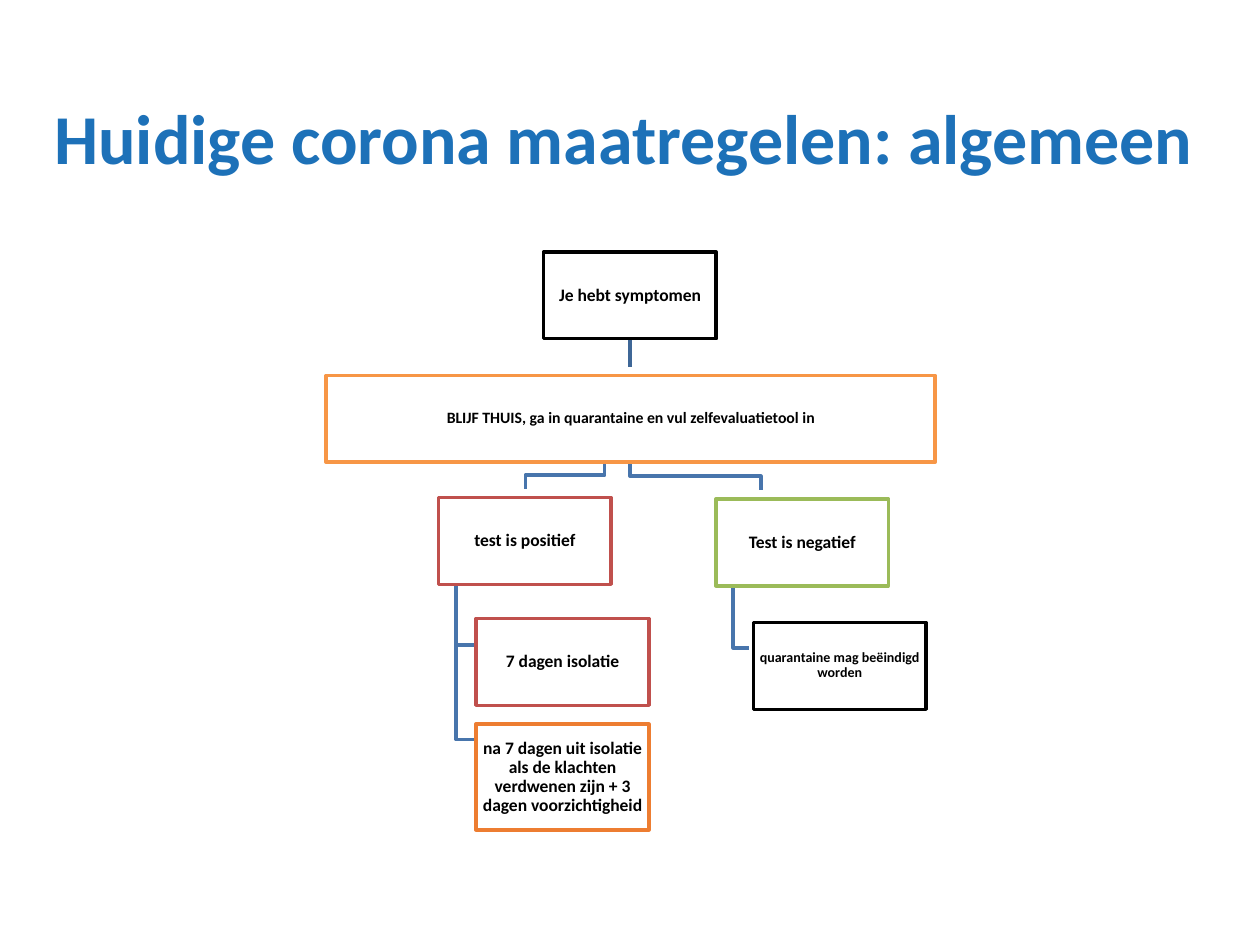
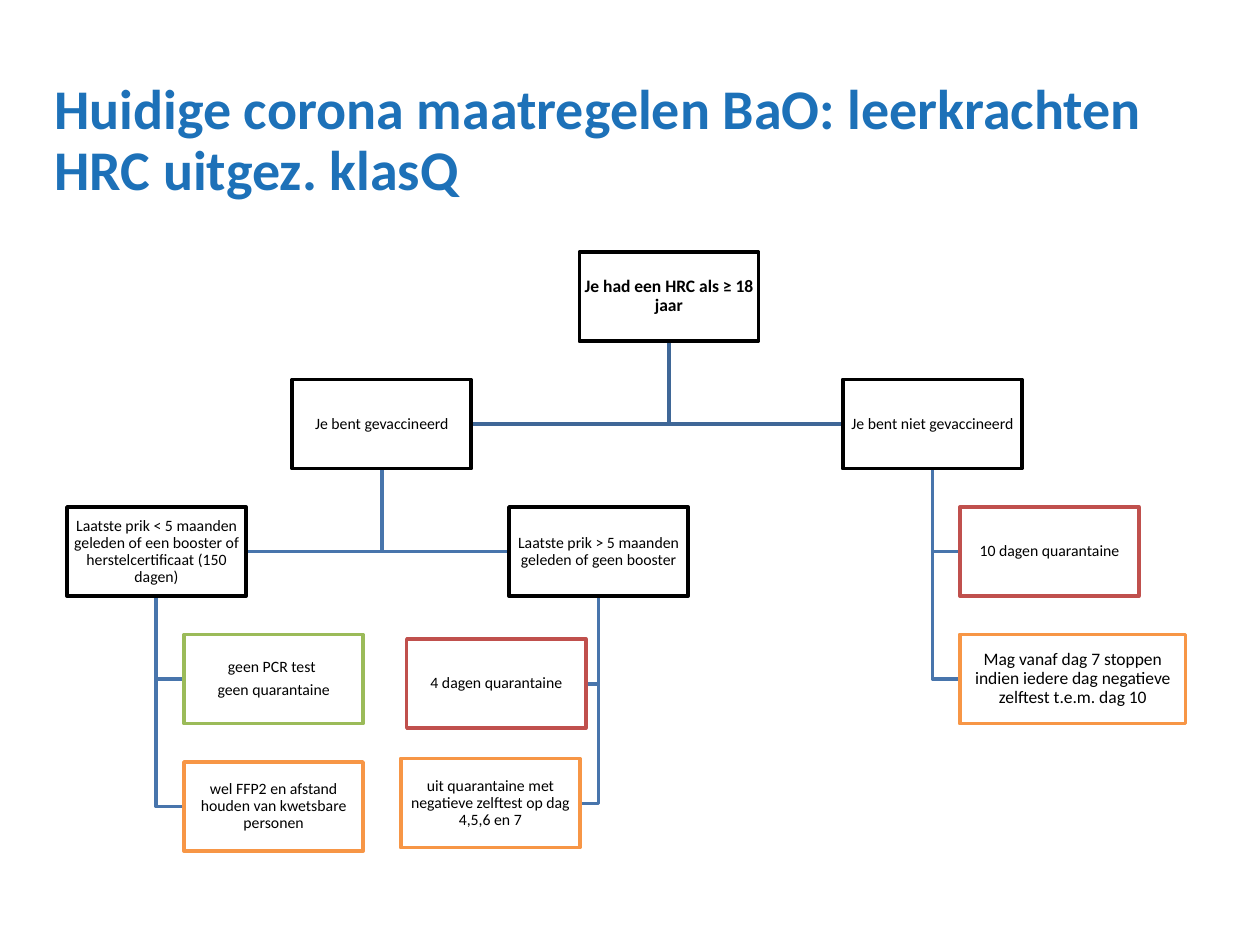
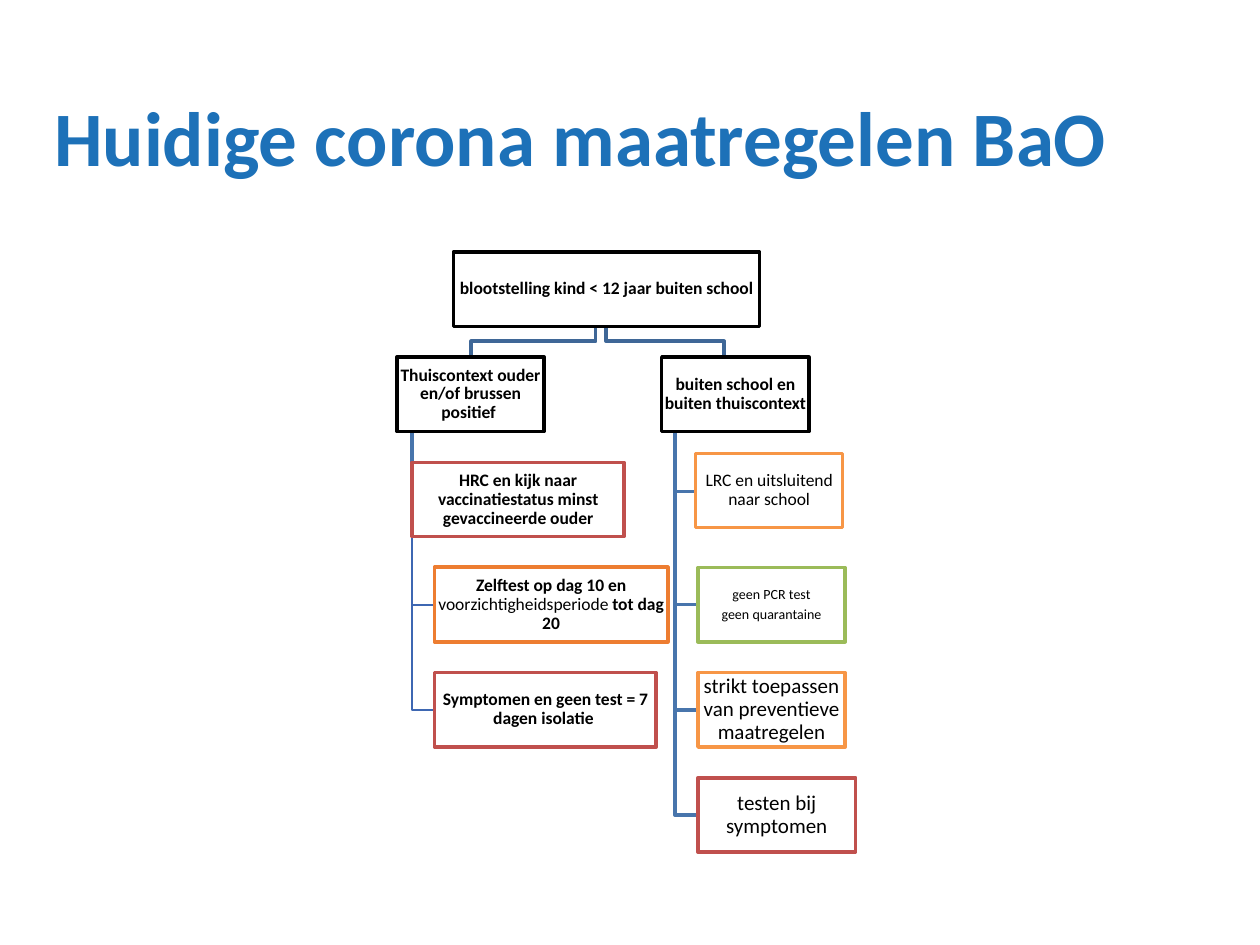
from lxml import etree
from pptx import Presentation
from pptx.dml.color import RGBColor
from pptx.enum.shapes import MSO_CONNECTOR, MSO_SHAPE
from pptx.enum.text import MSO_ANCHOR, MSO_AUTO_SIZE, PP_ALIGN
from pptx.oxml.ns import qn
from pptx.util import Cm, Pt

STRAIGHT = MSO_CONNECTOR.STRAIGHT
RECTANGLE = MSO_SHAPE.RECTANGLE
MIDDLE = MSO_ANCHOR.MIDDLE
NO_AUTOFIT = MSO_AUTO_SIZE.NONE
LEFT, CENTER = PP_ALIGN.LEFT, PP_ALIGN.CENTER

FONT = "Calibri"
TITLE_BLUE = "1D71B8"
TOP_BLUE, BRANCH_BLUE, THIN_BLUE = "3F6797", "4875AC", "3E67B2"
BLACK, WHITE = "000000", "FFFFFF"
RED, GREEN, ORANGE, DARK_ORANGE = "C0504D", "9BBB59", "F79646", "ED7D31"
TITLE_ONLY = 5
BOTTOM_SIDE = 2


def rgb(color):
    return RGBColor.from_string(color)


class FlowDeck:
    """Decision-tree slides; all positions and sizes are in centimetres."""

    def __init__(self):
        self.presentation = Presentation()
        self.presentation.slide_width = Cm(25.4)
        self.presentation.slide_height = Cm(19.05)

    def new_slide(self, title, title_size, box_width, box_height, text_size):
        """Start a slide and set the defaults for its boxes."""
        layout = self.presentation.slide_layouts[TITLE_ONLY]
        self.slide = self.presentation.slides.add_slide(layout)
        self.shapes = self.slide.shapes
        self.box_width, self.box_height = box_width, box_height
        self.text_size = text_size
        heading = self.shapes.title
        heading.left, heading.top = Cm(0.84), Cm(1.02)
        heading.width, heading.height = Cm(23.6), Cm(3.68)
        frame = heading.text_frame
        frame.text = title
        frame.word_wrap = True
        frame.auto_size = NO_AUTOFIT
        frame.vertical_anchor = MIDDLE
        paragraph = frame.paragraphs[0]
        paragraph.alignment = LEFT
        paragraph.line_spacing = 0.9
        self.style_run(paragraph.runs[0], title_size, TITLE_BLUE, True)

    def style_run(self, run, size, color, bold):
        run.font.name = FONT
        run.font.size = Pt(size)
        run.font.bold = bold
        run.font.color.rgb = rgb(color)

    def box(self, text, left, top, color=BLACK, bold=False, size=None,
            width=None, height=None, border=2):
        size = size or self.text_size
        box = self.shapes.add_shape(
            RECTANGLE, Cm(left), Cm(top),
            Cm(width or self.box_width), Cm(height or self.box_height))
        box.shadow.inherit = False
        box.fill.solid()
        box.fill.fore_color.rgb = rgb(WHITE)
        self.style_line(box.line, color, border)
        frame = box.text_frame
        frame.text = text
        frame.word_wrap = True
        frame.vertical_anchor = MIDDLE
        frame.margin_left = frame.margin_right = Cm(0.03)
        frame.margin_top = frame.margin_bottom = Cm(0.03)
        for paragraph in frame.paragraphs:
            paragraph.alignment = CENTER
            paragraph.line_spacing = 0.9
            paragraph.space_after = Pt(0.35 * size)
            self.style_run(paragraph.runs[0], size, BLACK, bold)
        return box

    def append_run(self, box, text, bold):
        run = box.text_frame.paragraphs[-1].add_run()
        run.text = text
        self.style_run(run, self.text_size, BLACK, bold)

    def style_line(self, line, color, width):
        line.color.rgb = rgb(color)
        line.width = Pt(width)

    def straight_line(self, x, top, bottom, color):
        line = self.shapes.add_connector(
            STRAIGHT, Cm(x), Cm(top), Cm(x), Cm(bottom))
        self.style_line(line.line, color, 2)
        etree.SubElement(line._element.spPr, qn("a:effectLst"))
        return line

    def bent_line(self, points, color, width):
        start, *others = [(Cm(x), Cm(y)) for x, y in points]
        builder = self.shapes.build_freeform(*start)
        builder.add_line_segments(others, close=False)
        outline = builder.convert_to_shape()
        outline.shadow.inherit = False
        outline.fill.background()
        self.style_line(outline.line, color, width)

    def hooks(self, x, top, ends, color=BRANCH_BLUE, width=2):
        """Go down from one point, then sideways to each end."""
        for end_x, end_y in ends:
            self.bent_line([(x, top), (x, end_y), (end_x, end_y)], color, width)

    def step(self, x, top, middle, end_x, bottom, color):
        """Go down, sideways at the middle height, and down again."""
        self.bent_line([(x, top), (x, middle), (end_x, middle), (end_x, bottom)],
                       color, 2)


def add_general_rules(deck):
    deck.new_slide("Huidige corona maatregelen: algemeen", 40, 3.48, 1.75, 10)
    deck.hooks(14.78, 11.81, [(15.09, 13.06)])
    deck.step(12.7, 9.3, 9.6, 15.34, 9.88, BRANCH_BLUE)
    deck.hooks(9.19, 11.79, [(9.6, 14.91), (9.6, 13)])
    deck.step(12.19, 9.3, 9.58, 10.59, 9.86, BRANCH_BLUE)
    stem = deck.straight_line(12.7, 6.83, 7.39, TOP_BLUE)

    symptoms = deck.box("Je hebt symptomen", 10.96, 5.08, bold=True)
    stem.begin_connect(symptoms, BOTTOM_SIDE)
    deck.box("BLIJF THUIS, ga in quarantaine en vul zelfevaluatietool in",
             6.58, 7.57, ORANGE, True, 9, width=12.27, border=2.25)
    deck.box("test is positief", 8.84, 10.03, RED, True)
    deck.box("7 dagen isolatie", 9.6, 12.47, RED, True)
    deck.box("na 7 dagen uit isolatie als de klachten verdwenen zijn "
             "+ 3 dagen voorzichtigheid",
             9.6, 14.6, DARK_ORANGE, True, height=2.13, border=2.25)
    deck.box("Test is negatief", 14.43, 10.06, GREEN, True)
    deck.box("quarantaine mag beëindigd worden", 15.19, 12.55, bold=True, size=8)


def add_teacher_rules(deck):
    deck.new_slide("Huidige corona maatregelen BaO: leerkrachten "
                   "HRC uitgez. klasQ", 32, 3.61, 1.8, 9)
    rows = [5.08 + 2.57 * level for level in range(5)]
    middles = [top + deck.box_height / 2 for top in rows]
    bottoms = [top + deck.box_height for top in rows]

    deck.hooks(18.8, bottoms[1], [(19.35, middles[3]), (19.35, middles[2])])
    deck.hooks(12.07, bottoms[2], [(11.84, 13.79), (11.71, 16.2)])
    deck.hooks(7.7, bottoms[1], [(10.26, middles[2]), (4.97, middles[2])])
    deck.hooks(3.15, bottoms[2], [(3.71, middles[4]), (3.71, middles[3])])
    deck.hooks(13.49, bottoms[0], [(16.99, middles[1]), (9.5, middles[1])],
               TOP_BLUE)

    deck.box("Je had een HRC als ≥ 18 jaar", 11.68, rows[0], bold=True, size=10)
    deck.box("Je bent gevaccineerd", 5.89, rows[1])
    deck.box("Laatste prik < 5 maanden geleden of een booster of "
             "herstelcertificaat (150 dagen)", 1.35, rows[2])
    deck.box("geen PCR test \ngeen quarantaine", 3.71, rows[3], GREEN)
    deck.box("wel FFP2 en afstand houden van kwetsbare personen",
             3.71, rows[4], ORANGE)
    deck.box("Laatste prik > 5 maanden geleden of geen booster", 10.26, rows[2])
    deck.box("uit quarantaine met negatieve zelftest op dag 4,5,6 en 7",
             8.08, 15.29, ORANGE)
    deck.box("4 dagen quarantaine", 8.2, 12.88, RED)
    deck.box("Je bent niet gevaccineerd", 16.99, rows[1])
    deck.box("10 dagen quarantaine", 19.35, rows[2], RED)
    deck.box("Mag vanaf dag 7 stoppen indien iedere dag negatieve zelftest "
             "t.e.m. dag 10", 19.35, rows[3], ORANGE, size=10, width=4.55)


def add_child_rules(deck):
    deck.new_slide("Huidige corona maatregelen BaO", 44, 2.97, 1.5, 10)
    rows = [5.08 + 2.12 * level for level in range(6)]
    middles = [top + deck.box_height / 2 for top in rows]
    home_x, elsewhere_x = 8.76, 14.07

    deck.hooks(13.61, 8.69, [(elsewhere_x, middle) for middle in middles[:2:-1]])
    deck.hooks(13.61, 8.69, [(14.02, 9.91)])
    deck.step(12.22, 6.55, 6.88, 14.6, 7.19, TOP_BLUE)
    deck.hooks(8.31, 8.69, [(home_x, middles[4]), (home_x, middles[3])],
               THIN_BLUE, 1)
    deck.straight_line(8.31, 8.69, 10.06, BRANCH_BLUE)
    deck.step(12.01, 6.55, 6.88, 9.5, 7.19, TOP_BLUE)

    deck.box("blootstelling kind < 12 jaar buiten school", 9.14, rows[0],
             bold=True, width=6.17)
    deck.box("Thuiscontext ouder en/of brussen positief ", 8, rows[1], bold=True)
    deck.box("HRC en kijk naar vaccinatiestatus minst gevaccineerde ouder",
             8.31, rows[2], RED, True, width=4.27)
    self_test = deck.box("Zelftest op dag 10 en ", home_x, rows[3], DARK_ORANGE,
                         True, width=4.7, border=2.25)
    deck.append_run(self_test, "voorzichtigheidsperiode", False)
    deck.append_run(self_test, " tot dag 20", True)
    deck.box("Symptomen en geen test = 7 dagen isolatie ", home_x, rows[4], RED,
             True, width=4.47)
    deck.box("buiten school en buiten thuiscontext ", 13.34, rows[1], bold=True)
    deck.box("LRC en uitsluitend naar school", 14.02, 9.14, ORANGE)
    deck.box("geen PCR test\ngeen quarantaine", elsewhere_x, rows[3], GREEN, size=8)
    deck.box("strikt toepassen van preventieve maatregelen", elsewhere_x, rows[4],
             ORANGE, size=12)
    deck.box("testen bij symptomen", elsewhere_x, rows[5], RED, size=12, width=3.18)


def main():
    deck = FlowDeck()
    add_general_rules(deck)
    add_teacher_rules(deck)
    add_child_rules(deck)
    deck.presentation.save("out.pptx")


if __name__ == "__main__":
    main()
